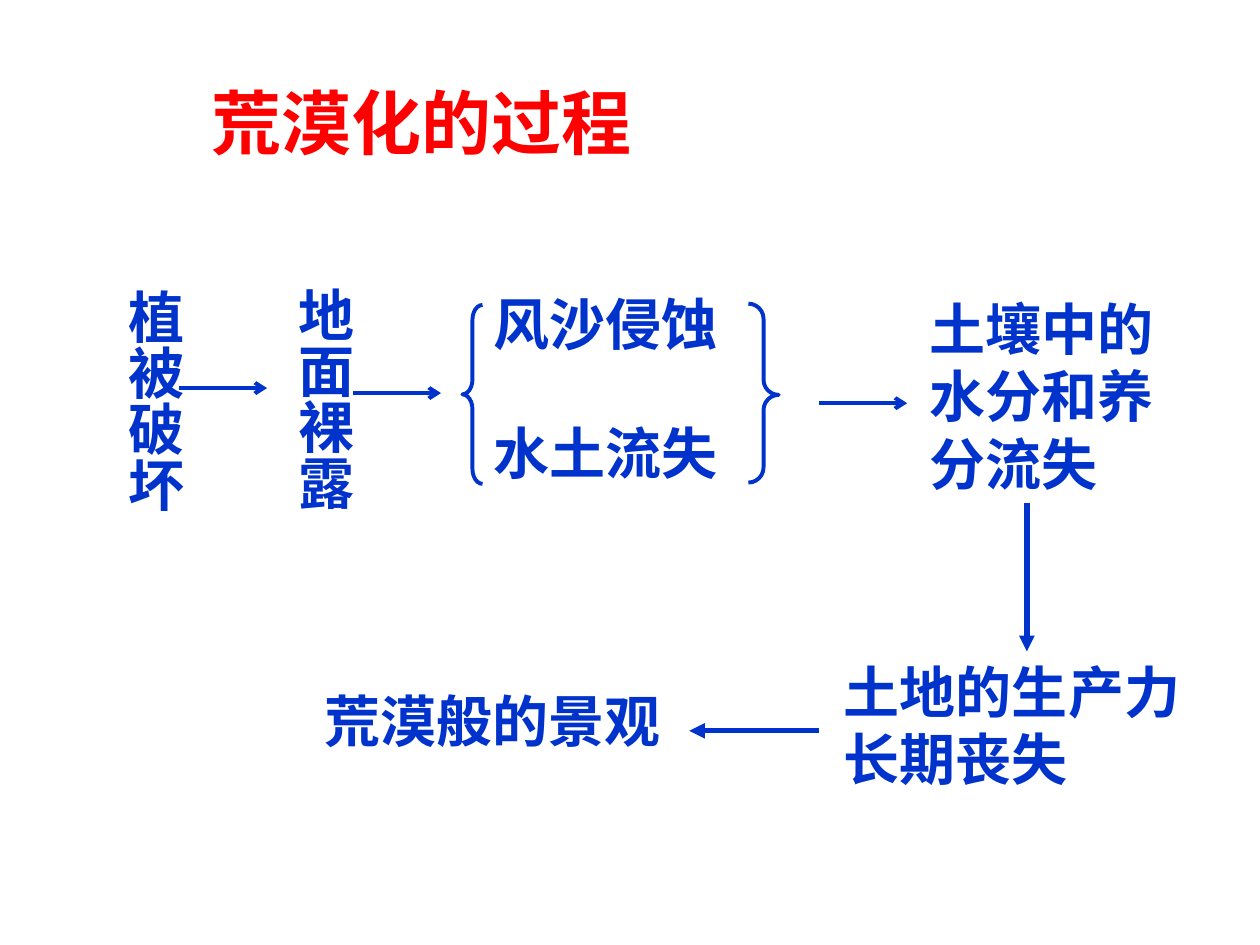
from pptx import Presentation
from pptx.dml.color import RGBColor
from pptx.enum import shapes, text
from pptx.oxml.ns import qn
from pptx.util import Inches, Pt
from lxml import etree

COLORS = {"title": "FF0000", "flow": "0033CC"}
CJK = "Noto Sans CJK SC"


def write(frame, words, size=32, color="flow", font="Arial", vertical=False):
    frame.word_wrap = True
    frame.auto_size = text.MSO_AUTO_SIZE.NONE
    frame.vertical_anchor = text.MSO_ANCHOR.TOP
    if vertical:
        frame._txBody.bodyPr.set("vert", "eaVert")
    paragraph = frame.paragraphs[0]
    paragraph.alignment = text.PP_ALIGN.LEFT
    run = paragraph.add_run()
    run.text = words
    run.font.size = Pt(size)
    run.font.bold = True
    run.font.name = font
    run.font.color.rgb = RGBColor.from_string(COLORS[color])
    etree.SubElement(run._r.rPr, qn("a:ea"), typeface=CJK)


prs = Presentation()
prs.slide_width, prs.slide_height = Inches(10), Inches(7.5)
slide = prs.slides.add_slide(prs.slide_layouts[5])

# Title
title = slide.shapes.title
title.left, title.top = Inches(1.58), Inches(0.58)
title.width, title.height = Inches(5.17), Inches(0.77)
write(title.text_frame, "荒漠化的过程", size=40, color="title", font=CJK)

# Stages of desertification
stages = [
    ("植被破坏", 0.81, 2.2, 0.73, 2.3, True),
    ("地面裸露", 2.16, 2.18, 0.73, 2.24, True),
    ("风沙侵蚀", 3.82, 2.25, 2.21, 0.63, False),
    ("水土流失", 3.82, 3.27, 2.21, 0.63, False),
    ("土壤中的水分和养分流失", 7.28, 2.29, 2.22, 1.7, False),
    ("土地的生产力长期丧失", 6.6, 5.17, 3.07, 1.17, False),
    ("荒漠般的景观", 2.48, 5.4, 3.31, 0.63, False),
]
for words, left, top, width, height, vertical in stages:
    stage = slide.shapes.add_textbox(Inches(left), Inches(top), Inches(width), Inches(height))
    write(stage.text_frame, words, vertical=vertical)

# Braces around the two kinds of erosion
braces = [
    (shapes.MSO_SHAPE.LEFT_BRACE, 3.67, 2.42, 0.16, (0.74, 0.5)),
    (shapes.MSO_SHAPE.RIGHT_BRACE, 5.94, 2.41, 0.24, (0.5, 0.51)),
]
for kind, left, top, width, bends in braces:
    brace = slide.shapes.add_shape(kind, Inches(left), Inches(top), Inches(width), Inches(1.42))
    brace.adjustments[0], brace.adjustments[1] = bends
    brace.shadow.inherit = False
    brace.fill.background()
    brace.line.color.rgb = RGBColor.from_string(COLORS["flow"])
    brace.line.width = Pt(2.25)

# Arrows from stage to stage
arrows = [
    (1.42, 3.08, 2.12, 3.08, 2.25, "arrow"),
    (2.8, 3.12, 3.5, 3.12, 2.25, "arrow"),
    (6.5, 3.2, 7.2, 3.2, 2.25, "arrow"),
    (8.15, 3.99, 8.15, 5.17, 3, "triangle"),
    (6.5, 5.8, 5.47, 5.8, 3, "triangle"),
]
for x1, y1, x2, y2, weight, head in arrows:
    arrow = slide.shapes.add_connector(
        shapes.MSO_CONNECTOR.STRAIGHT, Inches(x1), Inches(y1), Inches(x2), Inches(y2))
    arrow.line.color.rgb = RGBColor.from_string(COLORS["flow"])
    arrow.line.width = Pt(weight)
    etree.SubElement(arrow.line._get_or_add_ln(), qn("a:tailEnd"), type=head)
    etree.SubElement(arrow._element.spPr, qn("a:effectLst"))

prs.save("out.pptx")
